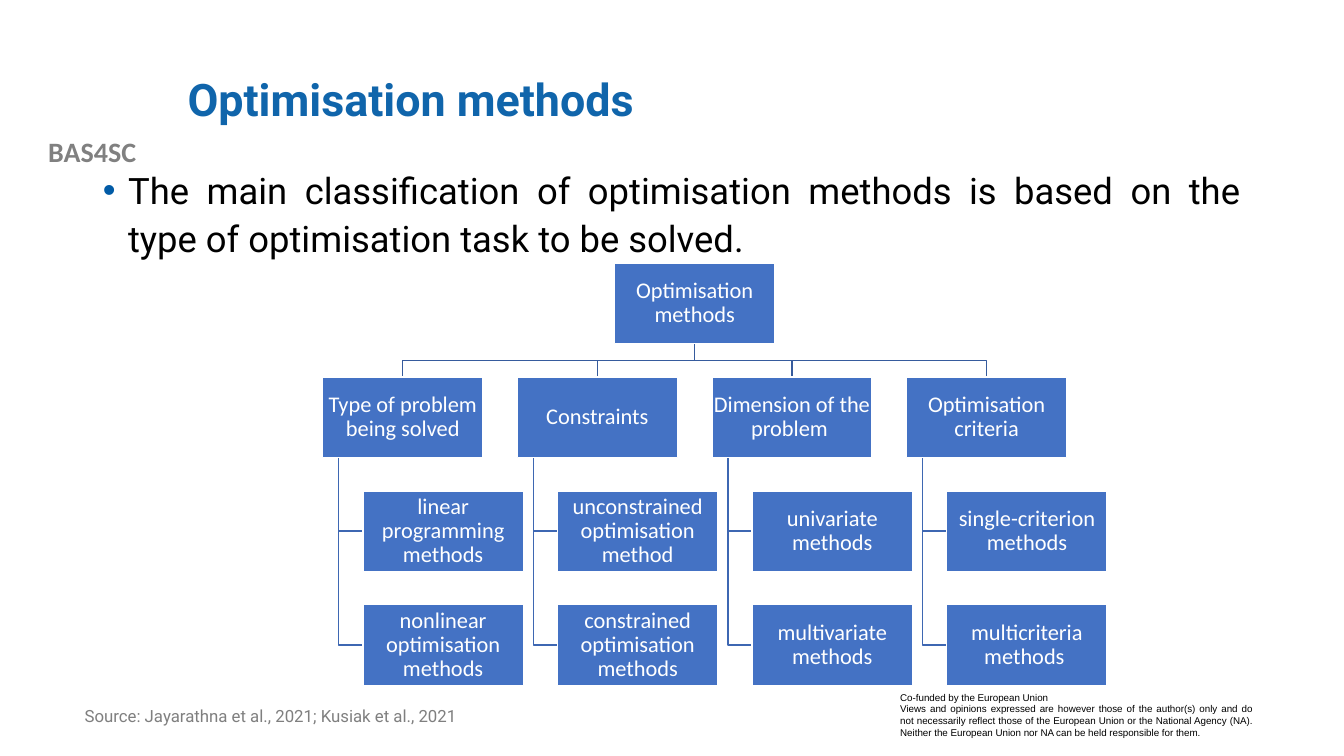
"""Build a slide that classifies optimisation methods in a tree diagram."""
import lxml.etree
import pptx
import pptx.dml.color
import pptx.enum.shapes
import pptx.enum.text
import pptx.oxml.ns
import pptx.util

Inches = pptx.util.Inches
Pt = pptx.util.Pt
ALIGN = pptx.enum.text.PP_ALIGN
ANCHOR = pptx.enum.text.MSO_ANCHOR

TITLE = "Optimisation methods"
STATEMENT = ("The main classification of optimisation methods is based on the "
             "type of optimisation task to be solved.")
PROJECT = "BAS4SC"
SOURCE = "Source: Jayarathna et al., 2021; Kusiak et al., 2021"
DISCLAIMER = [
    "Co-funded by the European Union",
    "Views and opinions expressed are however those of the author(s) only and do not "
    "necessarily reflect those of the European Union or the National Agency (NA). "
    "Neither the European Union nor NA can be held responsible for them.",
]
ROOT = "Optimisation methods"
BRANCHES = {
    "Type of problem being solved": ["linear programming methods",
                                     "nonlinear optimisation methods"],
    "Constraints": ["unconstrained optimisation method",
                    "constrained optimisation methods"],
    "Dimension of the problem ": ["univariate methods", "multivariate methods"],
    "Optimisation criteria": ["single-criterion methods", "multicriteria methods "],
}

COLORS = {
    "title": "1065AB", "bullet": "015BA6", "text": "000000", "project": "808080",
    "source": "7F7F7F", "box": "4472C4", "white": "FFFFFF",
    "root_link": "365B9D", "leaf_link": "3E67B2",
}
FORMATS = {
    "title": ({"name": "Roboto", "size": Pt(32), "bold": True},
              {"alignment": ALIGN.LEFT, "line_spacing": 0.9}),
    "text": ({"name": "Roboto", "size": Pt(26)},
             {"alignment": ALIGN.JUSTIFY, "line_spacing": 1.1}),
    "project": ({"name": "Calibri", "size": Pt(20), "bold": True},
                {"alignment": ALIGN.CENTER}),
    "source": ({"name": "Roboto", "size": Pt(12)}, {"line_spacing": 0.9}),
    "disclaimer": ({"name": "Arial", "size": Pt(7)}, {"alignment": ALIGN.JUSTIFY}),
    "node": ({"name": "Calibri", "size": Pt(16)},
             {"alignment": ALIGN.CENTER, "line_spacing": 0.9}),
}

BOX_WIDTH, BOX_HEIGHT = 1.59, 0.8
TREE_LEFT, TREE_TOP = 3.2, 2.61
COLUMN_STEP, ROW_STEP = 1.93, 1.13
LEAF_INDENT, STEM_INDENT = 0.4, 0.16


def write(shape, lines, style, color, anchor=ANCHOR.TOP, margin=None):
    """Fill a shape with formatted paragraphs."""
    frame = shape.text_frame
    frame.text = "\n".join(lines)
    frame.word_wrap = True
    frame.auto_size = pptx.enum.text.MSO_AUTO_SIZE.NONE
    frame.vertical_anchor = anchor
    if margin is not None:
        for side in ("left", "top", "right", "bottom"):
            setattr(frame, f"margin_{side}", Inches(margin))
    font_values, paragraph_values = FORMATS[style]
    for paragraph in frame.paragraphs:
        for name, value in {"space_before": Pt(0), **paragraph_values}.items():
            setattr(paragraph, name, value)
        for name, value in font_values.items():
            setattr(paragraph.font, name, value)
        paragraph.font.color.rgb = pptx.dml.color.RGBColor.from_string(COLORS[color])


def place(shape, left, top, width, height):
    """Move and size a placeholder."""
    shape.left, shape.top = Inches(left), Inches(top)
    shape.width, shape.height = Inches(width), Inches(height)


def add_bullet(paragraph):
    """Give a paragraph a coloured hanging bullet."""
    properties = paragraph._p.get_or_add_pPr()
    properties.set("marL", str(Inches(0.25)))
    properties.set("indent", str(-Inches(0.25)))
    qn = pptx.oxml.ns.qn
    bullet_color = lxml.etree.SubElement(properties, qn("a:buClr"))
    lxml.etree.SubElement(bullet_color, qn("a:srgbClr"), val=COLORS["bullet"])
    lxml.etree.SubElement(properties, qn("a:buFont"), typeface="Arial")
    lxml.etree.SubElement(properties, qn("a:buChar"), char="•")


def add_text(slide, lines, style, color, left, top, width, height):
    """Add a text box."""
    box = slide.shapes.add_textbox(*map(Inches, (left, top, width, height)))
    write(box, lines, style, color)
    return box


def add_node(slide, text, left, top):
    """Add one box of the tree."""
    node = slide.shapes.add_shape(
        pptx.enum.shapes.MSO_SHAPE.RECTANGLE,
        *map(Inches, (left, top, BOX_WIDTH, BOX_HEIGHT)))
    node.shadow.inherit = False
    node.fill.solid()
    node.fill.fore_color.rgb = pptx.dml.color.RGBColor.from_string(COLORS["box"])
    node.line.color.rgb = pptx.dml.color.RGBColor.from_string(COLORS["white"])
    node.line.width = Pt(1)
    write(node, [text], "node", "white", ANCHOR.MIDDLE, 0.01)


def add_link(slide, points, color):
    """Add an open angular line through the points."""
    start, *others = [(Inches(x), Inches(y)) for x, y in points]
    builder = slide.shapes.build_freeform(*start)
    builder.add_line_segments(others, close=False)
    link = builder.convert_to_shape()
    link.shadow.inherit = False
    link.fill.background()
    link.line.color.rgb = pptx.dml.color.RGBColor.from_string(COLORS[color])
    link.line.width = Pt(1)


def add_tree(slide):
    """Add the links and then the boxes of the tree."""
    root_left = TREE_LEFT + COLUMN_STEP * (len(BRANCHES) - 1) / 2
    root_center = root_left + BOX_WIDTH / 2
    root_bottom = TREE_TOP + BOX_HEIGHT
    branch_top = TREE_TOP + ROW_STEP
    branch_bottom = branch_top + BOX_HEIGHT
    middle = (root_bottom + branch_top) / 2
    nodes = [(ROOT, root_left, TREE_TOP)]
    for column, (branch, leaves) in enumerate(BRANCHES.items()):
        left = TREE_LEFT + column * COLUMN_STEP
        center, stem = left + BOX_WIDTH / 2, left + STEM_INDENT
        leaf_left = left + LEAF_INDENT
        nodes.append((branch, left, branch_top))
        add_link(slide, [(root_center, root_bottom), (root_center, middle),
                         (center, middle), (center, branch_top)], "root_link")
        for row, leaf in enumerate(leaves, start=1):
            top = branch_top + row * ROW_STEP
            leaf_middle = top + BOX_HEIGHT / 2
            nodes.append((leaf, leaf_left, top))
            add_link(slide, [(stem, branch_bottom), (stem, leaf_middle),
                             (leaf_left, leaf_middle)], "leaf_link")
    for node in nodes:
        add_node(slide, *node)


def main():
    """Build and save the presentation."""
    presentation = pptx.Presentation()
    presentation.slide_width, presentation.slide_height = Inches(13.33), Inches(7.5)
    slide = presentation.slides.add_slide(presentation.slide_layouts[1])
    title, body = slide.shapes.title, slide.placeholders[1]
    place(title, 1.76, 0.4, 10.66, 1.22)
    write(title, [TITLE], "title", "title", ANCHOR.MIDDLE)
    place(body, 0.92, 1.57, 11.5, 1.22)
    write(body, [STATEMENT], "text", "text")
    add_bullet(body.text_frame.paragraphs[0])
    add_text(slide, [PROJECT], "project", "project", 0, 1.29, 1.83, 0.44)
    disclaimer = add_text(slide, DISCLAIMER, "disclaimer", "text", 8.83, 6.81, 3.69, 0.57)
    disclaimer.fill.solid()
    disclaimer.fill.fore_color.rgb = pptx.dml.color.RGBColor.from_string(COLORS["white"])
    add_text(slide, [SOURCE], "source", "source", 0.74, 6.97, 5.01, 0.52)
    add_tree(slide)
    presentation.save("out.pptx")


if __name__ == "__main__":
    main()
